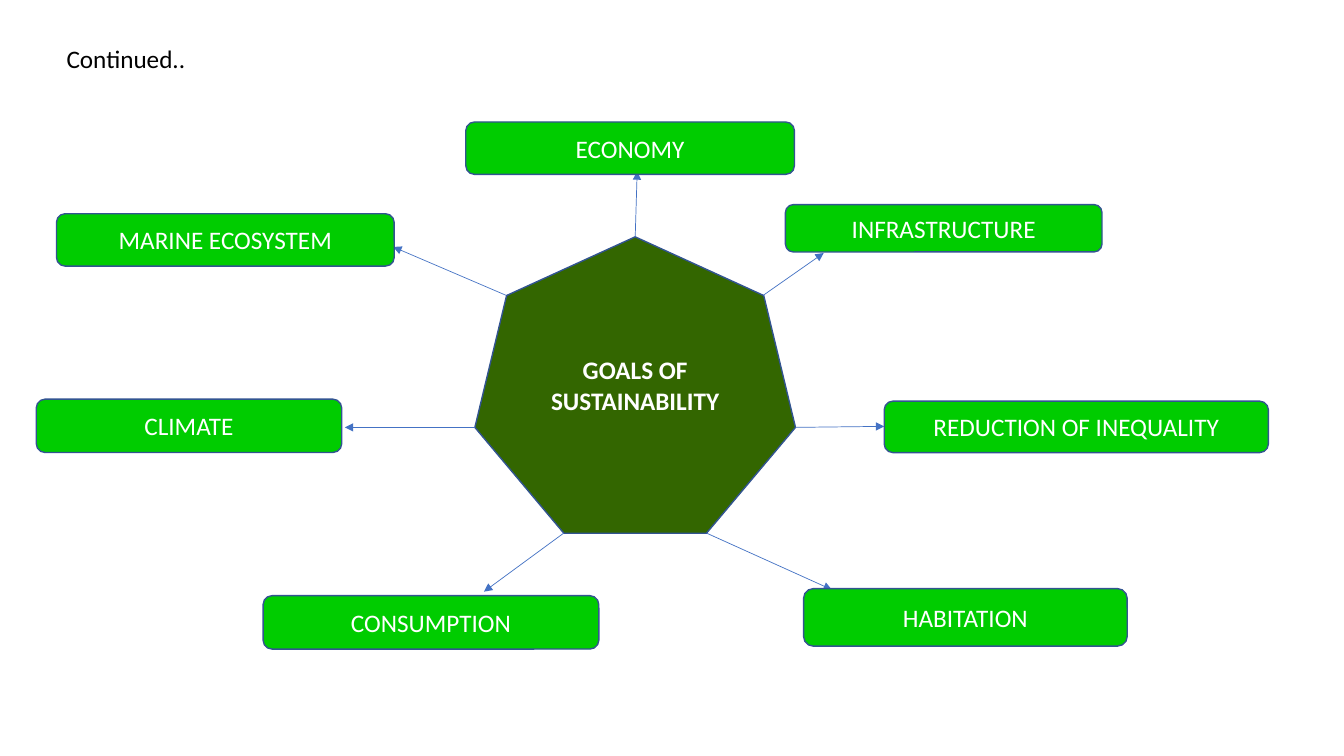
from lxml.etree import SubElement
from pptx import Presentation
from pptx.dml.color import RGBColor
from pptx.enum.shapes import MSO_CONNECTOR as Line, MSO_SHAPE as Shape
from pptx.enum.text import MSO_ANCHOR as Anchor, MSO_AUTO_SIZE as Fit, PP_ALIGN as Align
from pptx.oxml.ns import qn
from pptx.util import Inches, Pt

DARK, GREEN, EDGE, BLUE = "336600", "00CC00", "325491", "4472C4"
WHITE, BLACK = "FFFFFF", "000000"

# Goal, box (left, top, width, height), arrow start, arrow tip
GOALS = [
    ("ECONOMY", (4.62, 1.21, 3.26, 0.52), (6.3, 2.35), (6.32, 1.7)),
    ("INFRASTRUCTURE", (7.79, 2.03, 3.14, 0.47), (7.57, 2.93), (8.17, 2.51)),
    ("REDUCTION OF INEQUALITY", (8.77, 3.98, 3.81, 0.51), (7.89, 4.24), (8.77, 4.23)),
    ("HABITATION", (7.97, 5.84, 3.21, 0.57), (7.01, 5.29), (8.25, 5.85)),
    ("CONSUMPTION", (2.61, 5.91, 3.33, 0.53), (5.59, 5.29), (4.8, 5.87)),
    ("CLIMATE", (0.36, 3.96, 3.03, 0.53), (4.71, 4.24), (3.42, 4.24)),
    ("MARINE ECOSYSTEM", (0.56, 2.12, 3.35, 0.52), (5.02, 2.93), (3.9, 2.45)),
]


def color(code):
    return RGBColor.from_string(code)


def write(shape, text, ink, align, bold=False):
    frame = shape.text_frame
    frame.text = text
    frame.word_wrap = True
    frame.auto_size = Fit.NONE
    frame.vertical_anchor = Anchor.MIDDLE
    para = frame.paragraphs[0]
    para.alignment = align
    font = para.font
    font.name, font.size, font.bold = "Calibri", Pt(18), bold
    font.color.rgb = color(ink)


def add_title(slide, text, box):
    title = slide.shapes.title
    title.left, title.top, title.width, title.height = map(Inches, box)
    write(title, text, BLACK, Align.LEFT)


def add_node(slide, kind, text, box, fill, bold=False):
    node = slide.shapes.add_shape(kind, *map(Inches, box))
    node.shadow.inherit = False
    node.fill.solid()
    node.fill.fore_color.rgb = color(fill)
    node.line.color.rgb = color(EDGE)
    node.line.width = Pt(1)
    write(node, text, WHITE, Align.CENTER, bold)


def add_arrow(slide, start, tip):
    arrow = slide.shapes.add_connector(Line.STRAIGHT, *map(Inches, start + tip))
    arrow.line.color.rgb = color(BLUE)
    arrow.line.width = Pt(0.5)
    SubElement(arrow.line._get_or_add_ln(), qn("a:tailEnd"), type="triangle")
    SubElement(arrow._element.spPr, qn("a:effectLst"))


def main():
    deck = Presentation()
    deck.slide_width, deck.slide_height = Inches(13.33), Inches(7.5)
    slide = deck.slides.add_slide(deck.slide_layouts[5])

    add_title(slide, "Continued..", (0.56, 0.38, 3.34, 0.4))

    # Hub
    add_node(slide, Shape.HEPTAGON, "GOALS OF SUSTAINABILITY",
             (4.71, 2.35, 3.18, 2.94), DARK, bold=True)

    # Arrows lie beneath the goal boxes
    for _, _, start, tip in GOALS:
        add_arrow(slide, start, tip)
    for text, box, _, _ in GOALS:
        add_node(slide, Shape.ROUNDED_RECTANGLE, text, box, GREEN)

    deck.save("out.pptx")


if __name__ == "__main__":
    main()
